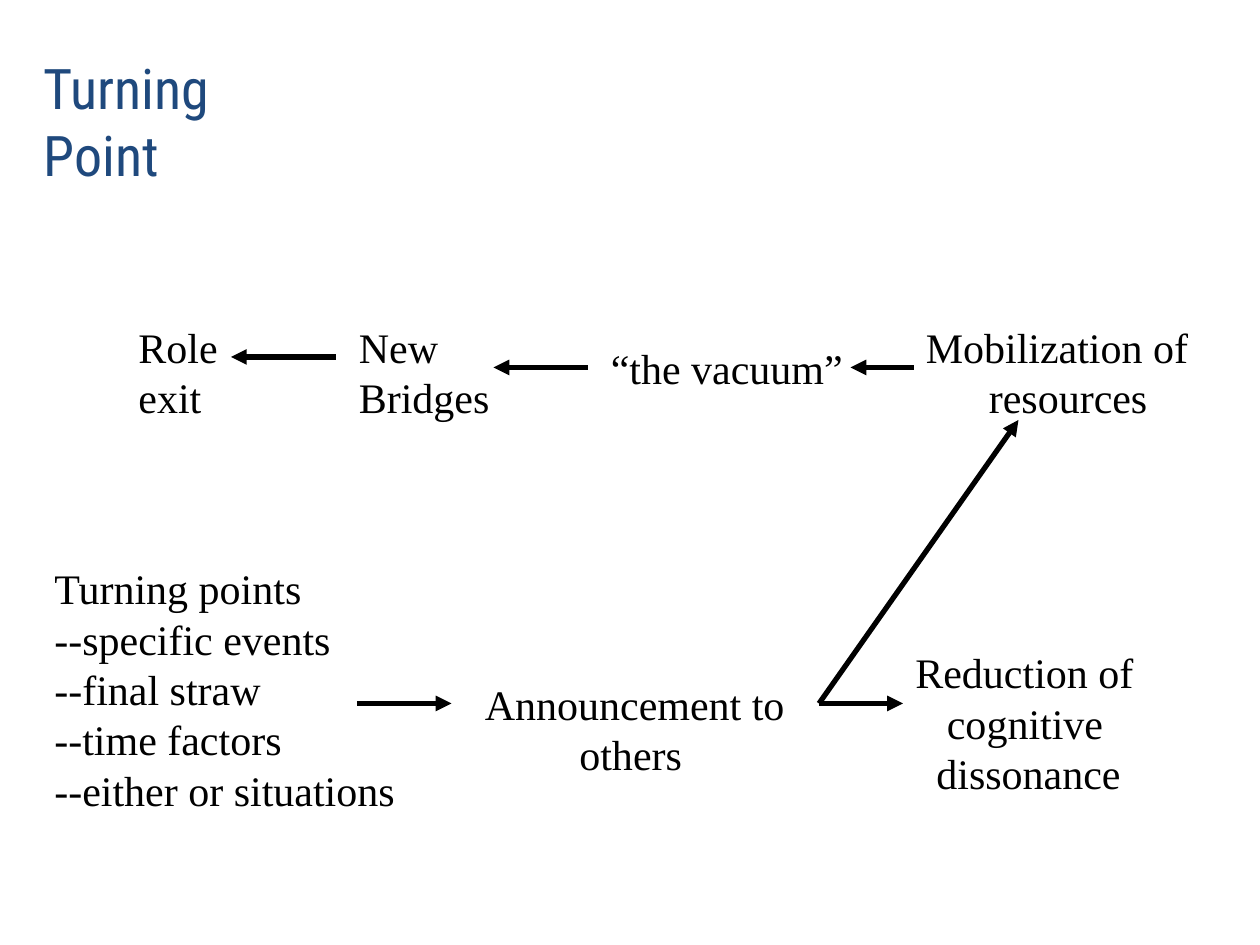
from lxml.etree import SubElement
from pptx import Presentation
from pptx.dml.color import RGBColor
from pptx.enum.shapes import MSO_CONNECTOR as Connector
from pptx.enum.text import MSO_ANCHOR as Anchor, MSO_AUTO_SIZE as AutoSize
from pptx.oxml.ns import qn
from pptx.util import Inches, Pt

BLACK = RGBColor(0x00, 0x00, 0x00)
NAVY = RGBColor(0x1F, 0x49, 0x7D)
TITLE_FONT = "Roboto Condensed"
BODY_FONT = "Times New Roman"
COLUMNS, ROWS = 120, 90
CELL = Inches(10) / COLUMNS


def grid(cells):
    """Turn a number of grid cells into a length."""
    return round(cells * CELL)


def add_text(slide, box, lines, *, indents=(), font=BODY_FONT, size=24,
             color=BLACK, anchor=Anchor.TOP, wrap=False):
    """Place one paragraph per line in a box of grid cells, each with its own indent."""
    shape = slide.shapes.add_textbox(*map(grid, box))
    frame = shape.text_frame
    frame.word_wrap = wrap
    frame.auto_size = AutoSize.NONE if wrap else AutoSize.SHAPE_TO_FIT_TEXT
    frame.vertical_anchor = anchor
    frame.text = "\n".join(lines)
    for paragraph in frame.paragraphs:
        paragraph.font.name = font
        paragraph.font.size = Pt(size)
        paragraph.font.color.rgb = color
    for paragraph, indent in zip(frame.paragraphs, indents):
        properties = paragraph._p.get_or_add_pPr()
        properties.set("marL", str(grid(indent)))
        properties.set("indent", "0")


def add_arrow(slide, start, end):
    """Draw a heavy arrow between two grid points."""
    arrow = slide.shapes.add_connector(Connector.STRAIGHT, *map(grid, (*start, *end)))
    arrow.line.color.rgb = BLACK
    arrow.line.width = Pt(3)
    SubElement(arrow.line._get_or_add_ln(), qn("a:tailEnd"), type="triangle")
    SubElement(arrow._element.spPr, qn("a:effectLst"))


def add_title(slide, box):
    """Place the slide title."""
    add_text(slide, box, ["Turning\vPoint"], font=TITLE_FONT, size=32,
             color=NAVY, anchor=Anchor.MIDDLE, wrap=True)


def add_stages(slide, origin, stages, arrows):
    """Place stage labels and arrows relative to the region's origin."""
    left, top = origin
    for (x, y, width, height), lines, indents in stages:
        add_text(slide, (left + x, top + y, width, height), lines, indents=indents)
    for ends in arrows:
        add_arrow(slide, *((left + x, top + y) for x, y in ends))


def add_turning_row(slide, origin):
    """Place the lower row, from turning points to its two consequences."""
    stages = [
        ((0, 0, 34.8, 25.2), ["Turning points", "--specific events", "--final straw",
                              "--time factors", "--either or situations"], ()),
        ((41, 11, 31, 10.8), ["Announcement to", "others"], (0, 9)),
        ((82, 8, 23.2, 15.6), ["Reduction of", "cognitive", "dissonance"], (0, 3, 2)),
    ]
    fork = (74, 14)
    arrows = [((30, 14), (39, 14)), (fork, (82, 14)), (fork, (93, -13))]
    add_stages(slide, origin, stages, arrows)


def add_exit_row(slide, origin):
    """Place the upper row, read from right to left up to the role exit."""
    stages = [
        ((75, 0, 28.3, 10.8), ["Mobilization of", "resources"], (0, 6)),
        ((45, 2, 24.5, 6), ["“the vacuum”"], ()),
        ((21, 0, 14.9, 10.8), ["New", "Bridges"], ()),
        ((0, 0, 10, 10.8), ["Role", "exit"], ()),
    ]
    arrows = [((75, 5), (69, 5)), ((44, 5), (35, 5)), ((20, 4), (10, 4))]
    add_stages(slide, origin, stages, arrows)


def main():
    """Build and save the slide."""
    presentation = Presentation()
    presentation.slide_width = grid(COLUMNS)
    presentation.slide_height = grid(ROWS)
    slide = presentation.slides.add_slide(presentation.slide_layouts[6])
    add_title(slide, (3, 4, 20, 15))
    add_turning_row(slide, (4, 53))
    add_exit_row(slide, (12, 30))
    presentation.save("out.pptx")


if __name__ == "__main__":
    main()
